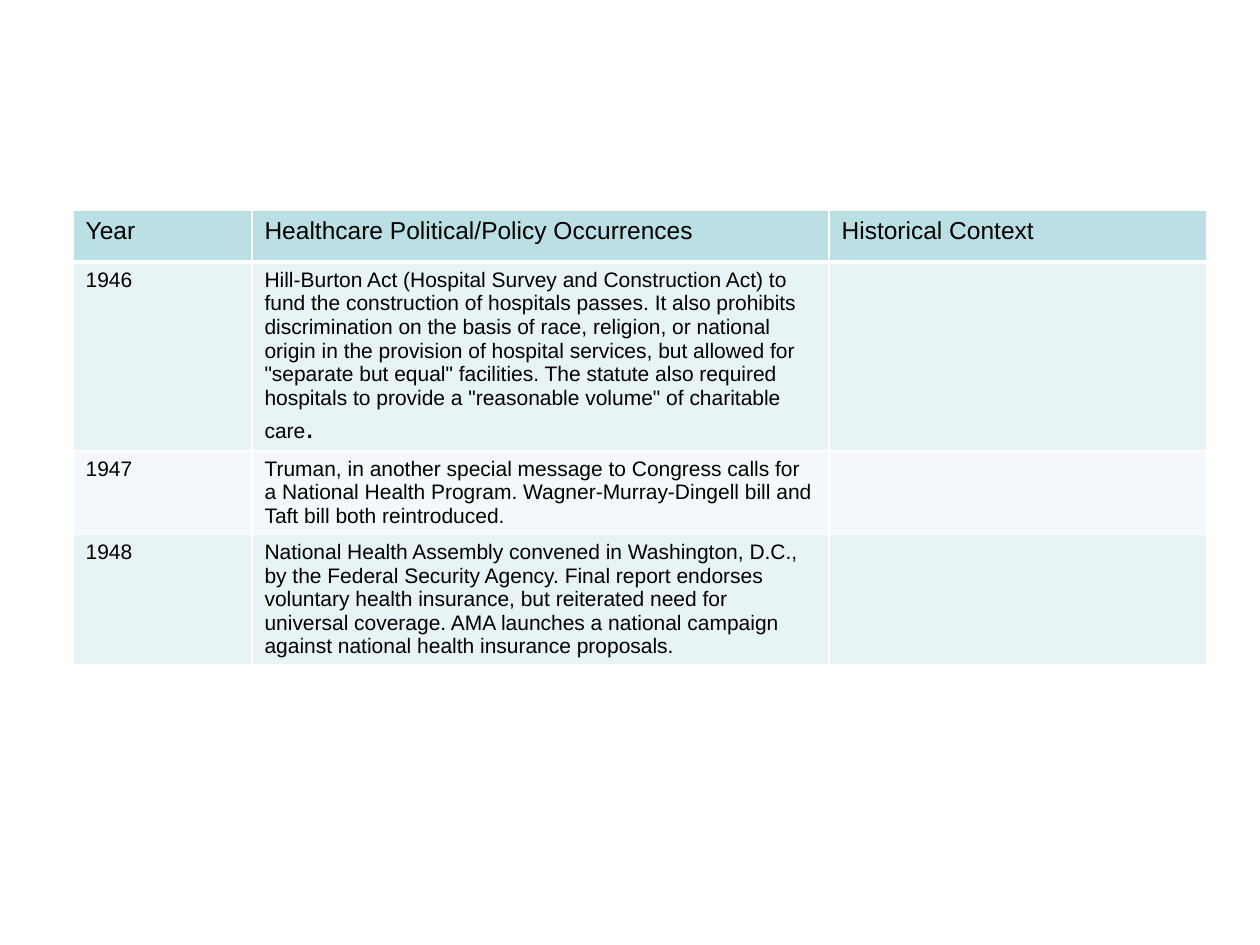
from lxml import etree
from pptx import Presentation
from pptx import util as u
from pptx.dml.color import RGBColor
from pptx.oxml import ns

BLACK = RGBColor(0x00, 0x00, 0x00)
WHITE = RGBColor(0xFF, 0xFF, 0xFF)
HEADER = RGBColor(0xBB, 0xE0, 0xE3)
BANDS = (RGBColor(0xE7, 0xF3, 0xF4), RGBColor(0xF3, 0xF9, 0xFA))

COLUMN_WIDTHS = (1.42, 4.58, 3)
ROW_HEIGHT = 0.41
HEADINGS = ("Year", "Healthcare Political/Policy Occurrences", "Historical Context")
EVENTS = (
    ("1946", (
        ("Hill-Burton Act (Hospital Survey and Construction Act) to fund the "
         "construction of hospitals passes. It also prohibits discrimination on "
         "the basis of race, religion, or national origin in the provision of "
         "hospital services, but allowed for \"separate but equal\" facilities. "
         "The statute also required hospitals to provide a \"reasonable volume\" "
         "of charitable care", 12),
        (".", 18),
    )),
    ("1947", (
        ("Truman, in another special message to Congress calls for a National "
         "Health Program. Wagner-Murray-Dingell bill and Taft bill both "
         "reintroduced.", 12),
    )),
    ("1948", (
        ("National Health Assembly convened in Washington, D.C., by the Federal "
         "Security Agency. Final report endorses voluntary health insurance, but "
         "reiterated need for universal coverage. AMA launches a national "
         "campaign against national health insurance proposals.", 12),
    )),
)


class SlideBuilder:
    font_name = "Arial"

    def __init__(self, slide):
        self.slide = slide

    def borders(self, cell, bottom):
        properties = cell._tc.get_or_add_tcPr()
        widths = {"lnL": 1, "lnR": 1, "lnT": 1, "lnB": bottom}
        for position, (side, width) in enumerate(widths.items()):
            line = etree.Element(ns.qn(f"a:{side}"), w=str(u.Pt(width)))
            fill = etree.SubElement(line, ns.qn("a:solidFill"))
            etree.SubElement(fill, ns.qn("a:srgbClr"), val=str(WHITE))
            properties.insert(position, line)

    def cell(self, cell, runs, color, bottom=1):
        cell.fill.solid()
        cell.fill.fore_color.rgb = color
        self.borders(cell, bottom)
        paragraph = cell.text_frame.paragraphs[0]
        for content, size in runs:
            run = paragraph.add_run()
            run.text = content
            run.font.name = self.font_name
            run.font.size = u.Pt(size)
            run.font.bold = False
            run.font.color.rgb = BLACK

    def table(self, left, top, headings, events):
        count = len(events) + 1
        table = self.slide.shapes.add_table(
            count, len(headings), u.Inches(left), u.Inches(top),
            u.Inches(sum(COLUMN_WIDTHS)), u.Inches(ROW_HEIGHT * count)).table
        for column, width in zip(table.columns, COLUMN_WIDTHS):
            column.width = u.Inches(width)
        for row in table.rows:
            row.height = u.Inches(ROW_HEIGHT)
        for index, heading in enumerate(headings):
            self.cell(table.cell(0, index), [(heading, 14)], HEADER, bottom=3)
        for row, (year, occurrence) in enumerate(events, start=1):
            color = BANDS[(row - 1) % 2]
            for index, runs in enumerate(([(year, 12)], occurrence, ())):
                self.cell(table.cell(row, index), runs, color)


def main():
    presentation = Presentation()
    presentation.slide_width = u.Inches(10)
    presentation.slide_height = u.Inches(7.5)
    slide = presentation.slides.add_slide(presentation.slide_layouts[6])
    SlideBuilder(slide).table(0.58, 1.67, HEADINGS, EVENTS)
    presentation.save("out.pptx")


if __name__ == "__main__":
    main()
